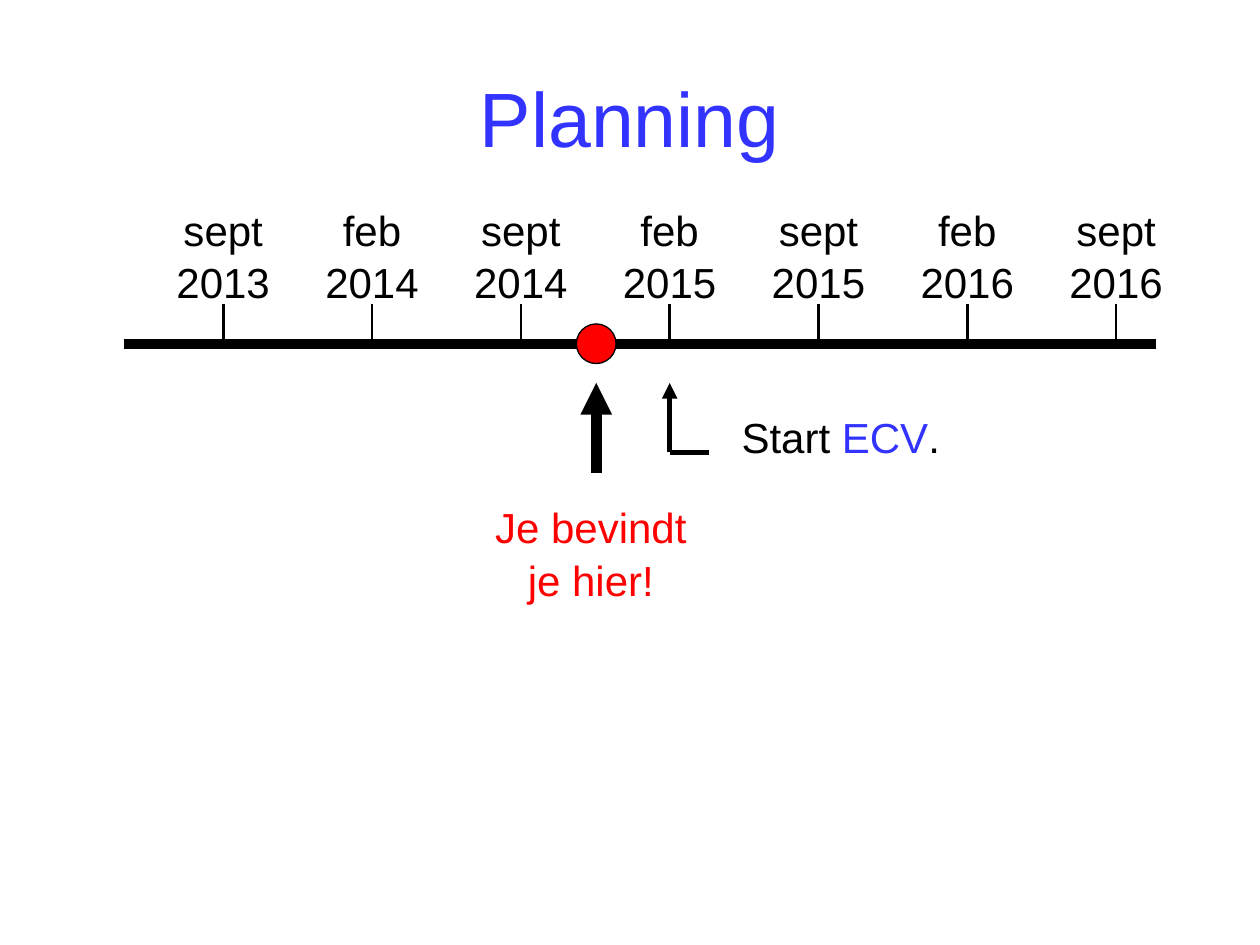
from dataclasses import dataclass

import pptx
import pptx.dml.color
import pptx.enum.shapes
import pptx.enum.text
import pptx.oxml.ns
import pptx.util
from lxml import etree

Cm = pptx.util.Cm
Pt = pptx.util.Pt
Color = pptx.dml.color.RGBColor
Align = pptx.enum.text.PP_ALIGN


@dataclass(frozen=True)
class Theme:
    font: str = "Arial"
    black: Color = Color(0, 0, 0)
    blue: Color = Color(0x33, 0x33, 0xFF)
    red: Color = Color(0xFF, 0, 0)
    title: int = 44
    body: int = 24


THEME = Theme()
DATES = ["sept 2013", "feb 2014", "sept 2014", "feb 2015",
         "sept 2015", "feb 2016", "sept 2016"]
FIRST, STEP = 4.5, 3  # centre of the first date and gap between dates, in cm
AXIS = 6.93
TIP = 7.72
NOW = 12.02


def add_run(para, text, color, size=THEME.body):
    run = para.add_run()
    run.text = text
    run.font.name = THEME.font
    run.font.size = Pt(size)
    run.font.color.rgb = color


def add_title(slide, text):
    title = slide.shapes.title
    title.left, title.top = Cm(1.27), Cm(0.76)
    title.width, title.height = Cm(22.86), Cm(3.18)
    title.text_frame.vertical_anchor = pptx.enum.text.MSO_ANCHOR.MIDDLE
    para = title.text_frame.paragraphs[0]
    para.alignment = Align.CENTER
    add_run(para, text, THEME.blue, THEME.title)


def add_line(shapes, start, end, width, arrow=False):
    line = shapes.add_connector(
        pptx.enum.shapes.MSO_CONNECTOR.STRAIGHT,
        *(Cm(val) for val in (*start, *end)))
    line.line.color.rgb = THEME.black
    line.line.width = Pt(width)
    qn = pptx.oxml.ns.qn
    if arrow:
        etree.SubElement(line.line._get_or_add_ln(), qn("a:tailEnd"),
                         type="triangle")
    etree.SubElement(line._element.spPr, qn("a:effectLst"))


def add_text(shapes, box, align, wrap=True):
    """Add an empty text box and return its first paragraph."""
    frame = shapes.add_textbox(*(Cm(val) for val in box)).text_frame
    frame.word_wrap = wrap
    frame.auto_size = pptx.enum.text.MSO_AUTO_SIZE.SHAPE_TO_FIT_TEXT
    para = frame.paragraphs[0]
    para.alignment = align
    para.line_spacing = 1.05
    return para


def add_date(shapes, mid, date):
    add_line(shapes, (mid, AXIS), (mid, 6.12), 1.5)
    width = 2.41
    para = add_text(shapes, (mid - width / 2, 3.94, width, 2.31),
                    Align.CENTER, wrap=False)
    month, year = date.split()
    add_run(para, month, THEME.black)
    para.add_line_break()
    add_run(para, year, THEME.black)


def add_now(shapes):
    add_line(shapes, (NOW, 9.53), (NOW, TIP), 6, arrow=True)
    size = 0.8
    dot = shapes.add_shape(
        pptx.enum.shapes.MSO_SHAPE.OVAL, Cm(NOW - size / 2),
        Cm(AXIS - size / 2), Cm(size), Cm(size))
    dot.shadow.inherit = False
    dot.fill.solid()
    dot.fill.fore_color.rgb = THEME.red
    dot.line.color.rgb = THEME.black
    dot.line.width = Pt(0.75)
    para = add_text(shapes, (9.6, 9.93, 4.62, 2.29), Align.CENTER)
    add_run(para, "Je bevindt je hier!", THEME.red)


def add_start(shapes):
    mid = FIRST + STEP * DATES.index("feb 2015")
    foot = 9.12
    add_line(shapes, (mid, foot), (mid, TIP), 3, arrow=True)
    add_line(shapes, (mid, foot), (mid + 0.8, foot), 3)
    para = add_text(shapes, (14.7, 8.13, 9.25, 1.27), Align.LEFT)
    add_run(para, "Start ", THEME.black)
    add_run(para, "ECV", THEME.blue)
    add_run(para, ".", THEME.black)


def main():
    deck = pptx.Presentation()
    deck.slide_width, deck.slide_height = Cm(25.4), Cm(19.05)
    slide = deck.slides.add_slide(deck.slide_layouts[5])
    shapes = slide.shapes
    add_title(slide, "Planning")
    add_line(shapes, (2.5, AXIS), (23.3, AXIS), 6)
    for idx, date in enumerate(DATES):
        add_date(shapes, FIRST + STEP * idx, date)
    add_now(shapes.add_group_shape().shapes)
    add_start(shapes.add_group_shape().shapes)
    deck.save("out.pptx")


if __name__ == "__main__":
    main()
